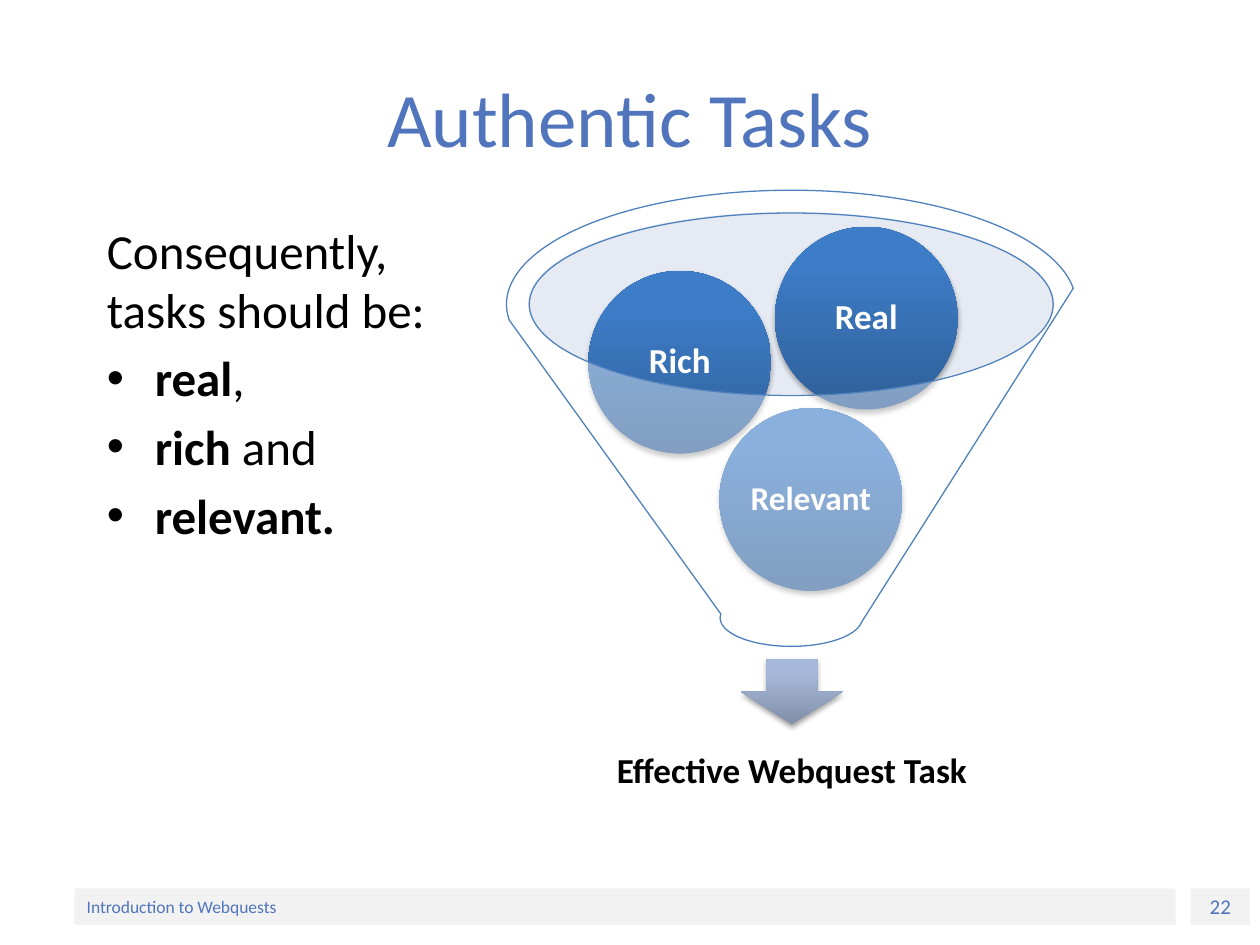
"""Build the Authentic Tasks slide with its funnel diagram."""
from lxml import etree
from pptx import Presentation
from pptx.dml.color import RGBColor
from pptx.enum.shapes import MSO_SHAPE
from pptx.enum.text import MSO_ANCHOR, PP_ALIGN
from pptx.oxml.ns import qn
from pptx.util import Inches, Pt

RECT, OVAL = MSO_SHAPE.RECTANGLE, MSO_SHAPE.OVAL
ARROW, FUNNEL = MSO_SHAPE.DOWN_ARROW, MSO_SHAPE.FUNNEL
MIDDLE, TOP = MSO_ANCHOR.MIDDLE, MSO_ANCHOR.TOP
LEFT, CENTER = PP_ALIGN.LEFT, PP_ALIGN.CENTER
BLUE = RGBColor(0x50, 0x75, 0xBC)
EDGE = RGBColor(0x4F, 0x81, 0xBD)
PALE = RGBColor(0xC2, 0xCD, 0xE1)
GRAY = RGBColor(0xF2, 0xF2, 0xF2)
BLACK = RGBColor(0, 0, 0)
WHITE = RGBColor(0xFF, 0xFF, 0xFF)
BALL = RGBColor(0x2F, 0x5F, 0x99), RGBColor(0x3D, 0x7C, 0xC7)
STEEL = RGBColor(0x81, 0x8F, 0xA8), RGBColor(0xA7, 0xB9, 0xDA)

deck = Presentation()
deck.slide_width, deck.slide_height = Inches(10), Inches(7.5)
slide = deck.slides.add_slide(deck.slide_layouts[6])


def draw(kind, box, fill, alpha=None):
    """Add a preset shape with a plain fill, or a shaded one if fill is a pair."""
    shape = slide.shapes.add_shape(kind, *map(Inches, box))
    shape.shadow.inherit = False
    shape.line.fill.background()
    props = shape._element.spPr
    if isinstance(fill, tuple) and not isinstance(fill, RGBColor):
        shape.fill.gradient()
        shape.fill.gradient_angle = 90
        for stop, color, place in zip(shape.fill.gradient_stops, fill, (0, 0.8)):
            stop.color.rgb = color
            stop.position = place
        glow = etree.SubElement(
            props.find(qn("a:effectLst")), qn("a:outerShdw"),
            blurRad=str(Pt(3.1)), dist=str(Pt(1.8)), dir="5400000", rotWithShape="0")
        tone = etree.SubElement(glow, qn("a:srgbClr"), val="000000")
        etree.SubElement(tone, qn("a:alpha"), val="35000")
    else:
        shape.fill.solid()
        shape.fill.fore_color.rgb = fill
    if alpha:
        tone = props.find(qn("a:solidFill")).find(qn("a:srgbClr"))
        etree.SubElement(tone, qn("a:alpha"), val=str(alpha * 1000))
    return shape


def write(shape, lines, size, color, align=CENTER, anchor=MIDDLE, inset=None, **style):
    """Fill a shape with lines, each a list of (words, bold) runs."""
    frame = shape.text_frame
    frame.word_wrap = True
    frame.vertical_anchor = anchor
    if inset is not None:
        for side in ("left", "top", "right", "bottom"):
            setattr(frame, f"margin_{side}", Inches(inset))
    for num, runs in enumerate(lines):
        para = frame.add_paragraph() if num else frame.paragraphs[0]
        para.alignment = align
        for name, value in style.items():
            setattr(para, name, value)
        for words, bold in runs:
            run = para.add_run()
            run.text = words
            run.font.color.rgb = color
            for name, value in {"name": "Calibri", "size": Pt(size), "bold": bold}.items():
                setattr(run.font, name, value)
    return frame


page = draw(RECT, (9.45, 7.05, 0.47, 0.29), GRAY)
write(page, [[("22", False)]], 12, BLUE)
foot = draw(RECT, (0.59, 7.05, 8.74, 0.29), GRAY)
write(foot, [[("Introduction to Webquests", False)]], 10, BLUE, LEFT)

title = slide.shapes.add_textbox(*map(Inches, (0.5, 0.3, 9, 1.25)))
write(title, [[("Authentic Tasks", False)]], 44, BLUE)

body = slide.shapes.add_textbox(*map(Inches, (0.75, 1.7, 3.08, 4.95)))
points = [
    [("Consequently, tasks should be:", False)],
    [("real", True), (",", False)],
    [("rich", True), (" and", False)],
    [("relevant.", True)],
]
frame = write(body, points, 28, BLACK, LEFT, TOP)
for para in frame.paragraphs[1:]:
    para.space_before = Pt(5.6)
    props = para._p.get_or_add_pPr()
    props.set("marL", str(Inches(0.38)))
    props.set("indent", str(-Inches(0.38)))
    etree.SubElement(props, qn("a:buFont"), typeface="Arial")
    etree.SubElement(props, qn("a:buChar"), char="•")

draw(OVAL, (4.19, 1.68, 4.17, 1.45), PALE, 40)
draw(ARROW, (5.88, 5.23, 0.81, 0.52), STEEL)
label = slide.shapes.add_textbox(*map(Inches, (4.35, 5.64, 3.87, 0.97)))
write(label, [[("Effective Webquest Task", True)]], 20, BLACK, inset=0.16, line_spacing=0.9)

for word, left, top, size in (
    ("Relevant", 5.71, 3.24, 19),
    ("Rich", 4.67, 2.15, 20),
    ("Real", 6.15, 1.8, 20),
):
    ball = draw(OVAL, (left, top, 1.45, 1.45), BALL)
    write(ball, [[(word, True)]], size, WHITE, inset=0.03, line_spacing=0.9)

cone = draw(FUNNEL, (4.02, 1.51, 4.52, 3.62), WHITE, 40)
cone.line.color.rgb = EDGE
cone.line.width = Pt(0.75)

deck.save("out.pptx")
